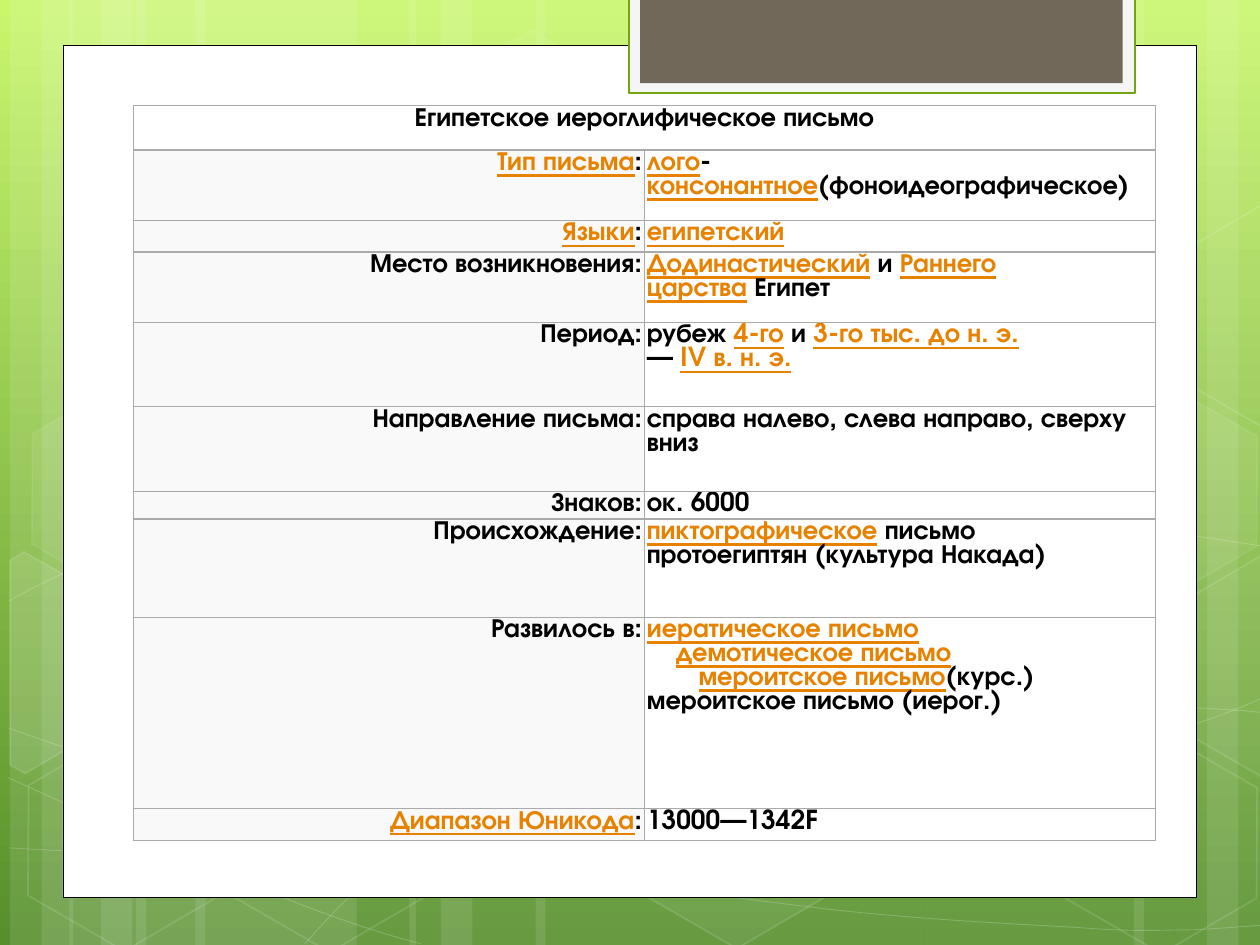
from itertools import product
from lxml.etree import SubElement
from pptx import Presentation
from pptx.dml.color import RGBColor
from pptx.enum.shapes import MSO_SHAPE as Kind
from pptx.enum.text import PP_ALIGN as Align
from pptx.oxml.ns import qn
from pptx.util import Inches, Pt

WIDE, HIGH = 10, 7.5
FONT = "TeX Gyre Adventor"
WHITE, BLACK, LINK, PALE, RULE = "FFFFFF", "000000", "E68200", "F9F9F9", "AAAAAA"

# Left edge and width of each full-height band
BANDS = [(1.08, 1.75), (0.08, 0.5), (0.33, 0.83), (1.55, 1.75), (0.55, 0.5), (0.8, 0.83),
         (7.33, 1.75), (9.58, 0.5), (9, 0.83), (4.25, 3.08), (3.25, 0.5), (3.5, 0.83)]

# Start point, then cubic steps of two controls and an end
CURVES = [
    [(0.07, 6.73), (0.61, 6.76, 1.15, 6.79, 1.9, 6.78), (2.65, 6.77, 3.58, 6.75, 4.58, 6.65),
     (5.58, 6.55, 7, 6.36, 7.92, 6.17), (8.83, 5.98, 9.77, 5.68, 10.07, 5.51)],
    [(0.07, 4.77), (0.36, 4.61, 0.65, 4.46, 1.21, 4.31), (1.78, 4.16, 2.59, 3.94, 3.47, 3.87),
     (4.36, 3.8, 5.44, 3.79, 6.54, 3.87), (7.64, 3.95, 9.47, 4.26, 10.07, 4.34)],
    [(0.06, 6.17), (1.27, 6.72, 2.47, 7.27, 3.34, 7.49)],
    [(0.07, 5.78), (0.38, 5.89, 0.7, 6, 1.28, 6.16), (1.86, 6.31, 2.73, 6.56, 3.57, 6.73),
     (4.4, 6.9, 5.45, 7.08, 6.28, 7.18), (7.11, 7.29, 8, 7.33, 8.53, 7.36),
     (9.05, 7.4, 9.19, 7.38, 9.45, 7.38), (9.71, 7.37, 9.89, 7.35, 10.07, 7.34)],
    [(2.42, 7.49), (2.6, 7.29, 2.78, 7.09, 3.02, 6.91), (3.26, 6.73, 3.6, 6.53, 3.88, 6.39),
     (4.16, 6.25, 4.33, 6.19, 4.7, 6.09), (5.06, 5.99, 5.73, 5.85, 6.08, 5.78),
     (6.44, 5.71, 6.49, 5.71, 6.8, 5.69), (7.11, 5.66, 7.6, 5.63, 7.94, 5.62),
     (8.29, 5.61, 8.86, 5.62, 8.86, 5.62), (9.08, 5.62, 9.3, 5.62, 9.53, 5.62),
     (9.71, 5.63, 9.88, 5.64, 9.97, 5.65), (10.06, 5.66, 10.03, 5.65, 10.06, 5.66)],
]

# Left, top, fill opacity, line opacity
HEXES = [(3.34, 0.36, 4, 8), (4.97, 5.89, 6, 12), (0.11, 5.91, 0, 12), (0.14, 3.12, 7, 8),
         (1.74, 5.92, 0, 12), (7.53, 4.53, 10, 12), (8.34, 5.93, 0, 12), (8.34, 3.14, 7, 8)]

# Hexagons cut by the slide's edge: points, fill opacity
CUTS = [
    ([(0.08, 4.45), (0.19, 4.38), (0.96, 4.82), (0.95, 5.7), (0.2, 6.14), (0.08, 6.07)], 10),
    ([(9.26, 4.85), (10.01, 4.41), (10.09, 4.46), (10.09, 6.13), (10.02, 6.17), (9.26, 5.73)], 4),
    ([(9.26, 2.07), (10.01, 1.63), (10.1, 1.68), (10.09, 3.35), (10.02, 3.39), (9.26, 2.95)], 0),
]

# Height, label, lines of the value; [brackets] mark links, ~ a space that does not break
ROWS = [
    (0.35, "Египетское иероглифическое письмо", []),
    (0.56, "[Тип письма]:", ["[лого]-[консонантное](фоноидеографическое)"]),
    (0.25, "[Языки]:", ["[египетский]"]),
    (0.56, "Место возникновения:", ["[Додинастический]~и~[Раннего царства]~Египет"]),
    (0.67, "Период:", ["рубеж~[4-го]~и~[3-го тыс. до~н.~э.]", "—~[IV в. н. э.]"]),
    (0.67, "Направление письма:", ["справа налево, слева направо, сверху вниз"]),
    (0.22, "Знаков:", ["ок. 6000"]),
    (0.78, "Происхождение:", ["[пиктографическое]~письмо протоегиптян~(культура Накада)"]),
    (1.52, "Развилось в:", ["[иератическое письмо]", "[демотическое письмо]",
                            "[мероитское письмо](курс.)", "мероитское письмо~(иерог.)"]),
    (0.25, "[Диапазон Юникода]:", ["13000—1342F"]),
]
INDENTS = {"[демотическое письмо]": 0.23, "[мероитское письмо](курс.)": 0.41}
HARD = chr(160)


def tint(hue):
    return RGBColor.from_string(hue)


def fade(fill, share):
    """Set the opacity of a solid fill, in percent."""
    color = fill._xPr.find(qn("a:solidFill"))[0]
    SubElement(color, qn("a:alpha")).set("val", str(share * 1000))


def paint(shape, fill=None, line=None, width=1, clear=100, faint=100):
    shape.shadow.inherit = False
    for part, hue, share in ((shape.fill, fill, clear), (shape.line.fill, line, faint)):
        if hue and share:
            part.solid()
            part.fore_color.rgb = tint(hue)
            if share < 100:
                fade(part, share)
        else:
            part.background()
    if line:
        shape.line.width = Pt(width)


def place(slide, kind, *box):
    return slide.shapes.add_shape(kind, *map(Inches, box))


def trace(slide, points, close):
    spots = [(Inches(x), Inches(y)) for x, y in points]
    pen = slide.shapes.build_freeform(*spots[0])
    pen.add_line_segments(spots[1:], close=close)
    return pen.convert_to_shape()


def bend(slide, curve):
    """Draw lines through the end points, then turn each into a cubic."""
    shape = trace(slide, [step[-2:] for step in curve], False)
    lines = list(shape._element.iter(qn("a:lnTo")))
    for line, step in zip(lines, curve[1:]):
        line.tag = qn("a:cubicBezTo")
        line.remove(line[0])
        for x, y in zip(step[::2], step[1::2]):
            SubElement(line, qn("a:pt"), x=str(Inches(x) - shape.left),
                       y=str(Inches(y) - shape.top))
    return shape


def draw_back(slide):
    # Green gradient from top to bottom
    fill = slide.background.fill
    fill.gradient()
    fill.gradient_angle = 270
    for stop, hue, spot in zip(fill.gradient_stops, ("C8F76C", "568F2C"), (0, 1)):
        stop.color.rgb = tint(hue)
        stop.position = spot
    # Bands, curves and hexagons
    for left, width in BANDS:
        paint(place(slide, Kind.RECTANGLE, left, 0, width, HIGH), WHITE, clear=10)
    for curve in CURVES:
        paint(bend(slide, curve), None, WHITE, 0.5, faint=20)
    for left, top, clear, faint in HEXES:
        hexa = place(slide, Kind.HEXAGON, left, top, 1.75, 1.52)
        hexa.adjustments[0] = 0.285
        hexa.rotation = 30
        paint(hexa, WHITE, WHITE, clear=clear, faint=faint)
    for points, clear in CUTS:
        paint(trace(slide, points, True), WHITE, WHITE, clear=clear, faint=12)
    # White page and the tab at its top
    paint(place(slide, Kind.RECTANGLE, 0.5, 0.36, 9, 6.76), WHITE, BLACK, 0.5)
    paint(place(slide, Kind.RECTANGLE, 4.99, -0.02, 4.02, 0.76), "F5F5F5", "74A510", 1.25)
    paint(place(slide, Kind.RECTANGLE, 5.08, -0.02, 3.83, 0.68), "71685A")


def frame(cell, fill):
    cell.margin_left = cell.margin_right = Inches(0.02)
    cell.margin_top = cell.margin_bottom = Inches(0.01)
    props = cell._tc.get_or_add_tcPr()
    for side in ("a:lnL", "a:lnR", "a:lnT", "a:lnB"):
        edge = SubElement(props, qn(side), w=str(Pt(0.75)))
        SubElement(SubElement(edge, qn("a:solidFill")), qn("a:srgbClr"), val=RULE)
    cell.fill.solid()
    cell.fill.fore_color.rgb = tint(fill)


def write(cell, lines, align):
    for n, line in enumerate(lines):
        para = cell.text_frame.add_paragraph() if n else cell.text_frame.paragraphs[0]
        para.alignment = align
        para.line_spacing = Pt(13.7)
        if line in INDENTS:
            para._p.get_or_add_pPr().set("marL", str(Inches(INDENTS[line])))
        for k, text in enumerate(line.replace("~", HARD).replace("]", "[").split("[")):
            if text:
                run = para.add_run()
                run.text = text
                font = run.font
                font.name, font.size, font.bold = FONT, Pt(15), True
                font.underline = k % 2 == 1
                font.color.rgb = tint(LINK if k % 2 else BLACK)


def draw_table(slide):
    size = (1.06, 0.84, 8.11, sum(row[0] for row in ROWS))
    table = slide.shapes.add_table(len(ROWS), 2, *map(Inches, size)).table
    table.first_row = table.horz_banding = False
    for r, c in product(range(len(ROWS)), range(2)):
        frame(table.cell(r, c), WHITE if c or not r else PALE)
    table.cell(0, 0).merge(table.cell(0, 1))
    for r, (high, label, lines) in enumerate(ROWS):
        table.rows[r].height = Inches(high)
        write(table.cell(r, 0), [label], Align.RIGHT if r else Align.CENTER)
        write(table.cell(r, 1), lines, Align.LEFT)


def main():
    deck = Presentation()
    deck.slide_width, deck.slide_height = Inches(WIDE), Inches(HIGH)
    slide = deck.slides.add_slide(deck.slide_layouts[6])
    draw_back(slide)
    draw_table(slide)
    deck.save("out.pptx")


if __name__ == "__main__":
    main()
